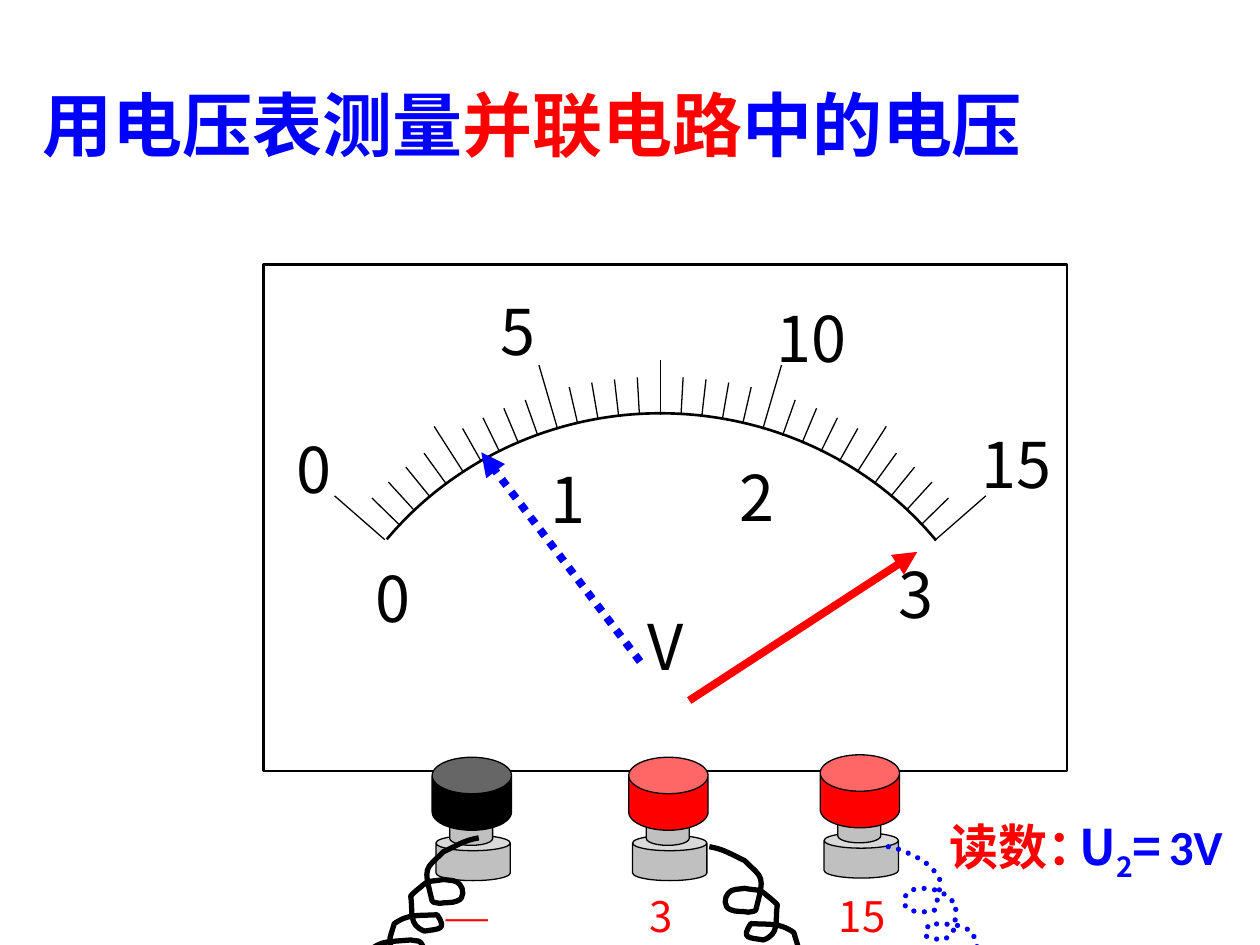
from copy import deepcopy
from math import cos, radians, sin

from lxml.etree import SubElement
from pptx import Presentation
from pptx.dml.color import RGBColor
from pptx.enum.dml import MSO_LINE
from pptx.enum.shapes import MSO_CONNECTOR, MSO_SHAPE
from pptx.enum.text import MSO_ANCHOR, MSO_AUTO_SIZE, PP_ALIGN
from pptx.oxml.ns import qn
from pptx.util import Inches, Pt

SANS, LATIN, SERIF = "Noto Sans CJK SC", "Calibri", "Times New Roman"
BLACK, WHITE, GRAY, RED, BLUE = "000000", "FFFFFF", "C0C0C0", "FF0000", "0000FF"

# Runs: text, font, size, colour, bold, subscript
TITLE = [
    ("用电压表测量", SANS, 40, BLUE, True, False),
    ("并联电路", SANS, 40, RED, True, False),
    ("中的电压", SANS, 40, BLUE, True, False),
]
READING_LABEL = [("读数：", LATIN, 28, RED, True, False)]
READING_VALUE = [
    ("U", SANS, 28, BLUE, True, False),
    ("2", SANS, 28, BLUE, True, True),
    ("=", SANS, 28, BLUE, True, False),
    (" ", LATIN, 18, BLUE, True, False),
    ("3V", LATIN, 28, BLUE, True, False),
]

DIAL_FRAME = (2.09, 2.1, 6.38, 4.02)
DIAL_CENTER = (5.24, 6.19)
DIAL_RADIUS = 2.9
TICK_COUNT, TICK_DEGREES = 31, 3.26
ARC_START, ARC_APEX = (3.07, 4.28), (5.24, 5.97)
ARC_CURVES = [  # two control points and an end point
    ((3.6, 3.65), (4.4, 3.28), (5.24, 3.28)),
    ((6.09, 3.28), (6.9, 3.65), (7.43, 4.29)),
]
DIAL_LABELS = [  # text, left, top, width, height
    ("V", 4.88, 4.77, 0.8, 0.88),
    ("5", 3.91, 2.27, 0.4, 0.54),
    ("0", 2.29, 3.37, 0.4, 0.54),
    ("3", 7.07, 4.36, 0.4, 0.54),
    ("2", 5.81, 3.59, 0.4, 0.54),
    ("1", 4.31, 3.61, 0.4, 0.54),
    ("0", 2.92, 4.39, 0.4, 0.54),
    ("10", 6.24, 2.33, 0.4, 0.54),
    ("15", 7.87, 3.33, 0.4, 0.54),
]
NEEDLES = [  # start, end, colour, dash
    ((5.47, 5.56), (7.28, 4.38), RED, None),
    ((5.08, 5.25), (3.82, 3.59), BLUE, MSO_LINE.ROUND_DOT),
]

TERMINALS = [  # cap left, cap top, cap colour, label, label font, label box
    (4.99, 6.01, RED, "3", SANS, (5.06, 7.02, 0.85, 1)),
    (6.51, 5.99, RED, "15", SANS, (6.56, 7.02, 0.65, 1.18)),
    (3.43, 6.01, BLACK, "—", SERIF, (3.44, 7, 0.82, 0.93)),
]
TERMINAL_PARTS = [  # x offset, y offset, width, height, rim, colour (None: cap colour)
    (0.03, 0.62, 0.59, 0.36, 0.34, GRAY),
    (0.14, 0.37, 0.34, 0.33, 0.33, GRAY),
    (0, 0, 0.63, 0.58, 0.5, None),
]

WIRES = [  # start, horizontal direction, colour, dash
    ((3.8, 6.65), -1, BLACK, None),
    ((5.63, 6.72), 1, BLACK, None),
    ((7.05, 6.72), 1, BLUE, MSO_LINE.ROUND_DOT),
]
WIRE_CURVES = [  # two control points and an end point, relative to the start
    ((0.12, 0.02), (0.17, 0.06), (0.28, 0.11)),
    ((0.43, 0.26), (0.44, 0.22), (0.37, 0.5)),
    ((0.36, 0.52), (0.33, 0.51), (0.31, 0.52)),
    ((0.27, 0.51), (0.21, 0.52), (0.17, 0.5)),
    ((0.11, 0.48), (0.12, 0.4), (0.15, 0.37)),
    ((0.18, 0.33), (0.23, 0.34), (0.28, 0.33)),
    ((0.38, 0.35), (0.4, 0.33), (0.46, 0.39)),
    ((0.49, 0.41), (0.54, 0.46), (0.54, 0.46)),
    ((0.52, 0.6), (0.56, 0.69), (0.43, 0.74)),
    ((0.31, 0.72), (0.25, 0.73), (0.33, 0.61)),
    ((0.49, 0.62), (0.55, 0.6), (0.67, 0.68)),
    ((0.72, 0.85), (0.71, 0.76), (0.68, 0.96)),
    ((0.6, 0.95), (0.51, 0.98), (0.44, 0.94)),
    ((0.41, 0.92), (0.44, 0.86), (0.46, 0.83)),
    ((0.48, 0.81), (0.51, 0.82), (0.54, 0.81)),
    ((0.77, 0.83), (0.79, 0.81), (0.93, 0.96)),
    ((0.93, 0.98), (0.94, 1.02), (0.94, 1.02)),
]


def color(hex_value):
    return RGBColor.from_string(hex_value)


def inches(values):
    return [Inches(value) for value in values]


def format_line(line, hex_value, width, dash=None):
    line.color.rgb = color(hex_value)
    line.width = Pt(width)
    if dash is not None:
        line.dash_style = dash


def write_runs(paragraph, runs):
    for text, font_name, size, hex_value, bold, subscript in runs:
        run = paragraph.add_run()
        run.text = text
        values = {"name": font_name, "size": Pt(size), "bold": bold}
        for name, value in values.items():
            setattr(run.font, name, value)
        run.font.color.rgb = color(hex_value)
        properties = run.font._element
        SubElement(properties, qn("a:ea")).set("typeface", SANS)
        if subscript:
            properties.set("baseline", "-25000")


def add_text(slide, box, runs, wrap=True, align=PP_ALIGN.LEFT, grow=False):
    frame = slide.shapes.add_textbox(*inches(box)).text_frame
    frame.word_wrap = wrap
    frame.auto_size = MSO_AUTO_SIZE.SHAPE_TO_FIT_TEXT if grow else MSO_AUTO_SIZE.NONE
    frame.paragraphs[0].alignment = align
    write_runs(frame.paragraphs[0], runs)


def add_shape(slide, kind, box, fill, line_width):
    shape = slide.shapes.add_shape(kind, *inches(box))
    shape.shadow.inherit = False
    shape.fill.solid()
    shape.fill.fore_color.rgb = color(fill)
    format_line(shape.line, BLACK, line_width)
    return shape


def add_line(slide, start, end, hex_value, width, dash=None, arrow=False):
    connector = slide.shapes.add_connector(MSO_CONNECTOR.STRAIGHT, *inches(start + end))
    format_line(connector.line, hex_value, width, dash)
    if arrow:
        SubElement(connector.line._get_or_add_ln(), qn("a:tailEnd")).set("type", "triangle")
    SubElement(connector._element.spPr, qn("a:effectLst"))


def add_curve(slide, start, curves, hex_value, width, dash=None, apex=None):
    """Draw joined Bezier curves; an apex adds an unstroked sector behind them."""
    points = [point for curve in curves for point in curve] + ([apex] if apex else [])
    builder = slide.shapes.build_freeform(*inches(start))
    builder.add_line_segments([inches(point) for point in points], close=False)
    shape = builder.convert_to_shape()
    shape.shadow.inherit = False
    shape.fill.background()
    format_line(shape.line, hex_value, width, dash)
    if dash is not None:
        shape.line._get_or_add_ln().set("cap", "rnd")
    outline = next(shape._element.iter(qn("a:path")))
    segments = outline.findall(qn("a:lnTo"))
    for index in range(0, 3 * len(curves), 3):
        bezier = SubElement(outline, qn("a:cubicBezTo"))
        for segment in segments[index:index + 3]:
            bezier.append(segment[0])
            outline.remove(segment)
    if apex:
        outline.append(segments[-1])
        sector = deepcopy(outline)
        sector.set("stroke", "0")
        SubElement(sector, qn("a:close"))
        outline.remove(segments[-1])
        outline.set("fill", "none")
        outline.addnext(sector)


def dial_point(tick, radius):
    """Point on the dial at a tick number, counted from the left end."""
    angle = radians((tick - (TICK_COUNT - 1) / 2) * TICK_DEGREES)
    return DIAL_CENTER[0] + radius * sin(angle), DIAL_CENTER[1] - radius * cos(angle)


def tick_length(tick):
    if tick % 10 == 0:
        return 0.53
    return 0.43 if tick % 5 == 0 else 0.3


def add_title(slide):
    title = slide.shapes.title
    title.left, title.top, title.width, title.height = inches((0.24, 0.6, 8.62, 0.77))
    title.text_frame.vertical_anchor = MSO_ANCHOR.TOP
    title.text_frame.auto_size = MSO_AUTO_SIZE.NONE
    title.text_frame.paragraphs[0].alignment = PP_ALIGN.LEFT
    write_runs(title.text_frame.paragraphs[0], TITLE)


def add_dial(slide):
    add_shape(slide, MSO_SHAPE.RECTANGLE, DIAL_FRAME, WHITE, 1.5)
    for tick in range(TICK_COUNT):
        outer = dial_point(tick, DIAL_RADIUS + tick_length(tick))
        add_line(slide, outer, dial_point(tick, DIAL_RADIUS), BLACK, 0.75)
    add_curve(slide, ARC_START, ARC_CURVES, BLACK, 1.5, apex=ARC_APEX)
    for text, *box in DIAL_LABELS:
        add_text(slide, box, [(text, SANS, 36, BLACK, False, False)], False, PP_ALIGN.CENTER)


def add_terminals(slide):
    for left, top, cap, label, font_name, label_box in TERMINALS:
        add_text(slide, label_box, [(label, font_name, 24, RED, False, False)])
        for x, y, width, height, rim, fill in TERMINAL_PARTS:
            can = add_shape(slide, MSO_SHAPE.CAN, (left + x, top + y, width, height),
                            fill or cap, 0.75)
            can.adjustments[0] = rim


def add_wires(slide):
    for (left, top), direction, hex_value, dash in WIRES:
        curves = [[(left + direction * x, top + y) for x, y in curve] for curve in WIRE_CURVES]
        add_curve(slide, (left, top), curves, hex_value, 3, dash)


def main():
    presentation = Presentation()
    presentation.slide_width, presentation.slide_height = Inches(10), Inches(7.5)
    slide = presentation.slides.add_slide(presentation.slide_layouts[5])
    for add_part in (add_title, add_dial, add_terminals, add_wires):
        add_part(slide)
    for start, end, hex_value, dash in NEEDLES:
        add_line(slide, start, end, hex_value, 4.5, dash, arrow=True)
    add_text(slide, (7.44, 6.43, 1.34, 0.57), READING_LABEL, grow=True)
    add_text(slide, (8.47, 6.43, 1.34, 0.57), READING_VALUE, grow=True)
    presentation.save("out.pptx")


if __name__ == "__main__":
    main()
